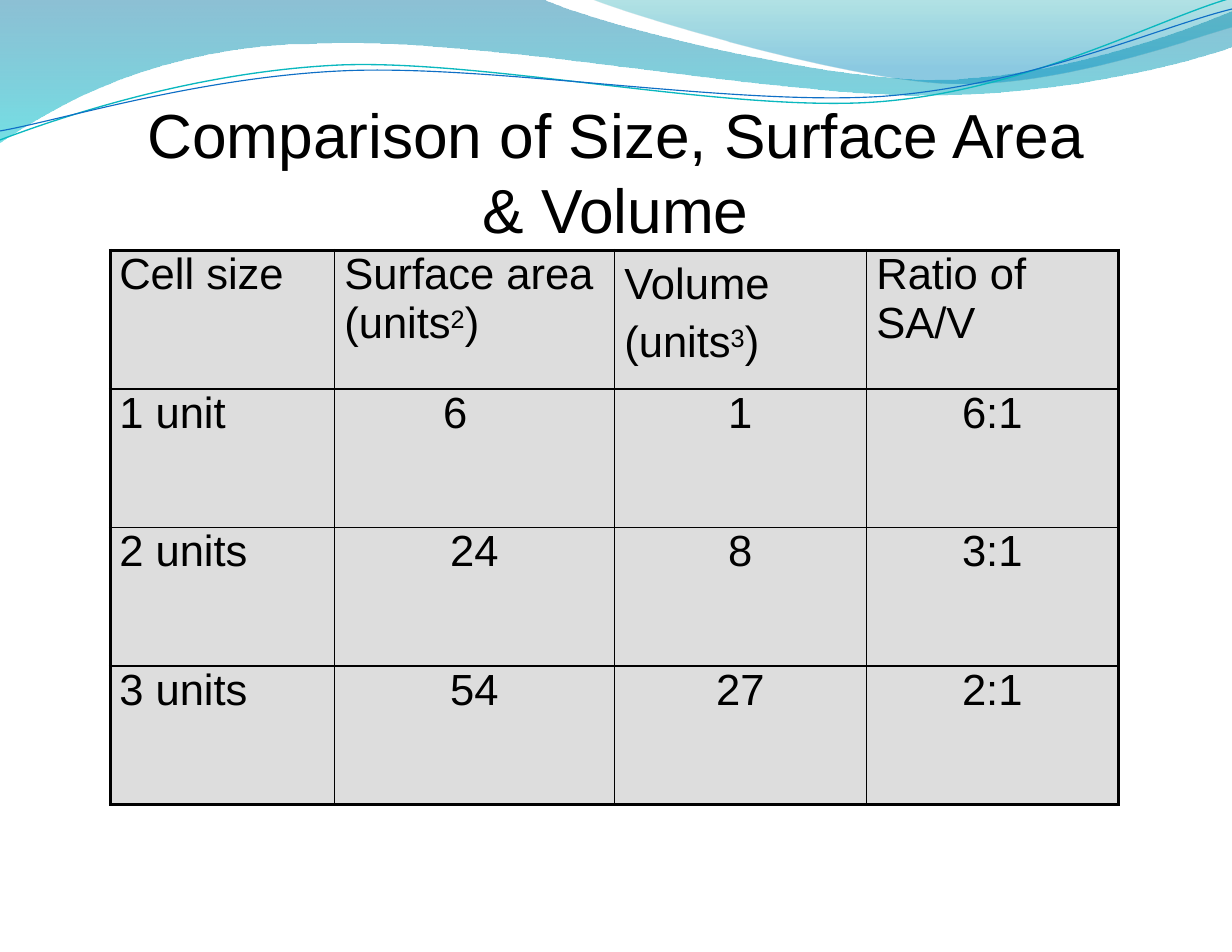
import pptx
import pptx.dml.color
import pptx.enum.text
import pptx.oxml.ns
import pptx.util
from lxml import etree

Pt = pptx.util.Pt
CENTER = pptx.enum.text.PP_ALIGN.CENTER
LEFT = pptx.enum.text.PP_ALIGN.LEFT
qn = pptx.oxml.ns.qn

COLORS = {
    "ink": "000000",
    "cell": "DDDDDD",
    "deep_blue": "0074A1",
    "aqua": "00C6CF",
    "teal": "00A1A9",
    "sky": "008BBF",
    "teal_line": "0AB8BF",
    "blue_line": "0F6FC6",
}

LOWER_WAVE = [
    (0, 0), (348.5, -0.7),
    (376.6, 13.7, 525.6, 51.1, 600.5, 51.1),
    (675.4, 51.1, 758.9, 20.9, 792, 7.2),
    (792.7, 29.5),
    (779, 36, 689, 61.9, 590.4, 61.2),
    (492.5, 61.2, 302.4, 23, 203.8, 28.1),
    (102.2, 28.8, 36, 67.7, -0.7, 92.2),
    (0, 0),
]
UPPER_WAVE = [
    (379.4, -0.7),
    (403.2, 9.4, 540, 50.4, 609.1, 53.3),
    (677.5, 56.2, 761.8, 25.9, 792, 17.3),
    (792, 0),
    (379.4, -0.7),
]
TEAL_CURVE = [
    (0, 90),
    (38.2, 75.6, 124.6, 46.1, 218.9, 41.8),
    (313.2, 38.2, 469.4, 72.7, 564.5, 65.5),
    (659.5, 58.3, 743, 13, 789.8, -0.7),
]
BLUE_CURVE = [
    (0, 84.2),
    (37.4, 77.8, 129.6, 49, 223.9, 45.4),
    (319, 41.8, 473, 68.4, 568.1, 61.9),
    (662.4, 54.7, 745.2, 17.3, 792, 5.8),
]

TITLE_LINES = ["Comparison of Size, Surface Area", "& Volume"]
COLUMN_WIDTHS = [144, 180, 162, 162]
ROW_HEIGHT = 89.1
ROWS = [
    [["Cell size"], ["Surface area (units", "2", ")"],
     ["Volume (units", "3", ")"], ["Ratio of SA/V"]],
    [["1 unit"], ["6"], ["1"], ["6:1"]],
    [["2 units"], ["24"], ["8"], ["3:1"]],
    [["3 units"], ["54"], ["27"], ["2:1"]],
]


def rgb(name):
    return pptx.dml.color.RGBColor.from_string(COLORS[name])


def add_outline(slide, segments, close):
    ends = [(Pt(segment[-2]), Pt(segment[-1])) for segment in segments]
    builder = slide.shapes.build_freeform(*ends[0])
    builder.add_line_segments(ends[1:], close=close)
    outline = builder.convert_to_shape()
    outline.shadow.inherit = False
    steps = list(outline._element.spPr.iter(qn("a:lnTo")))
    for step, segment in zip(steps, segments[1:]):
        if len(segment) == 6:
            step.tag = qn("a:cubicBezTo")
            for index in (0, 2):
                control = etree.Element(
                    qn("a:pt"),
                    x=str(Pt(segment[index]) - outline.left),
                    y=str(Pt(segment[index + 1]) - outline.top))
                step.insert(index // 2, control)
    return outline


def add_wave(slide, segments, stops):
    wave = add_outline(slide, segments, True)
    wave.line.fill.background()
    wave.fill.gradient()
    wave.fill.gradient_angle = 270
    for stop, (position, color, _) in zip(wave.fill.gradient_stops, stops):
        stop.position = position
        stop.color.rgb = rgb(color)
    tints = list(wave._element.spPr.iter(qn("a:srgbClr")))
    for tint, (_, _, opacity) in zip(tints, stops):
        etree.SubElement(tint, qn("a:alpha")).set("val", str(opacity * 1000))


def add_curve(slide, segments, color, width):
    curve = add_outline(slide, segments, False)
    curve.fill.background()
    curve.line.color.rgb = rgb(color)
    curve.line.width = Pt(width)


def set_font(paragraph, size):
    paragraph.font.size = Pt(size)
    paragraph.font.name = "Arial"
    paragraph.font.color.rgb = rgb("ink")


def add_title(slide):
    frame = slide.shapes.add_textbox(Pt(92.2), Pt(61.9), Pt(607), Pt(90)).text_frame
    frame.word_wrap = True
    frame.margin_left = frame.margin_right = 0
    frame.margin_top = frame.margin_bottom = 0
    frame.text = "\n".join(TITLE_LINES)
    for paragraph in frame.paragraphs:
        paragraph.alignment = CENTER
        set_font(paragraph, 40)


def set_borders(cell, widths):
    properties = cell._tc.get_or_add_tcPr()
    for side, width in widths.items():
        border = etree.SubElement(properties, qn("a:ln" + side), w=str(Pt(width)))
        fill = etree.SubElement(border, qn("a:solidFill"))
        etree.SubElement(fill, qn("a:srgbClr"), val=COLORS["ink"])


def fill_cell(cell, texts, row, column):
    cell.margin_left = cell.margin_right = 0
    cell.margin_top = cell.margin_bottom = 0
    paragraph = cell.text_frame.paragraphs[0]
    for index, text in enumerate(texts):
        run = paragraph.add_run()
        run.text = text
        if index == 1:
            run._r.get_or_add_rPr().set("baseline", "23000")
    set_font(paragraph, 28)
    if row == 0 or column == 0:
        paragraph.alignment = LEFT
        indent = 5.8 if column == 0 else 6.5
        paragraph._p.get_or_add_pPr().set("marL", str(Pt(indent)))
    else:
        paragraph.alignment = CENTER
    last_row, last_column = len(ROWS) - 1, len(COLUMN_WIDTHS) - 1
    set_borders(cell, {
        "L": 2.25 if column == 0 else 1,
        "R": 2.25 if column == last_column else 1,
        "T": 2.25 if row == 0 else 1,
        "B": 2.25 if row == last_row else 1,
    })
    cell.fill.solid()
    cell.fill.fore_color.rgb = rgb("cell")


def add_comparison(slide):
    comparison = slide.shapes.add_table(
        len(ROWS), len(COLUMN_WIDTHS), Pt(70.9), Pt(160.9),
        Pt(sum(COLUMN_WIDTHS)), Pt(ROW_HEIGHT * len(ROWS))).table
    for column, width in zip(comparison.columns, COLUMN_WIDTHS):
        column.width = Pt(width)
    for row in comparison.rows:
        row.height = Pt(ROW_HEIGHT)
    for row, cells in enumerate(ROWS):
        for column, texts in enumerate(cells):
            fill_cell(comparison.cell(row, column), texts, row, column)
    comparison.cell(0, 2).text_frame.paragraphs[0].line_spacing = 1.2
    smallest_area = comparison.cell(1, 1).text_frame.paragraphs[0]
    smallest_area._p.get_or_add_pPr().set("marR", str(Pt(24.5)))


def main():
    deck = pptx.Presentation()
    deck.slide_width, deck.slide_height = Pt(792), Pt(612)
    slide = deck.slides.add_slide(deck.slide_layouts[6])
    add_wave(slide, LOWER_WAVE, [(0, "deep_blue", 45), (1, "aqua", 55)])
    add_wave(slide, UPPER_WAVE, [(0, "teal", 30), (0.8, "sky", 45)])
    add_curve(slide, TEAL_CURVE, "teal_line", 0.85)
    add_curve(slide, BLUE_CURVE, "blue_line", 0.75)
    add_title(slide)
    add_comparison(slide)
    deck.save("out.pptx")


if __name__ == "__main__":
    main()
